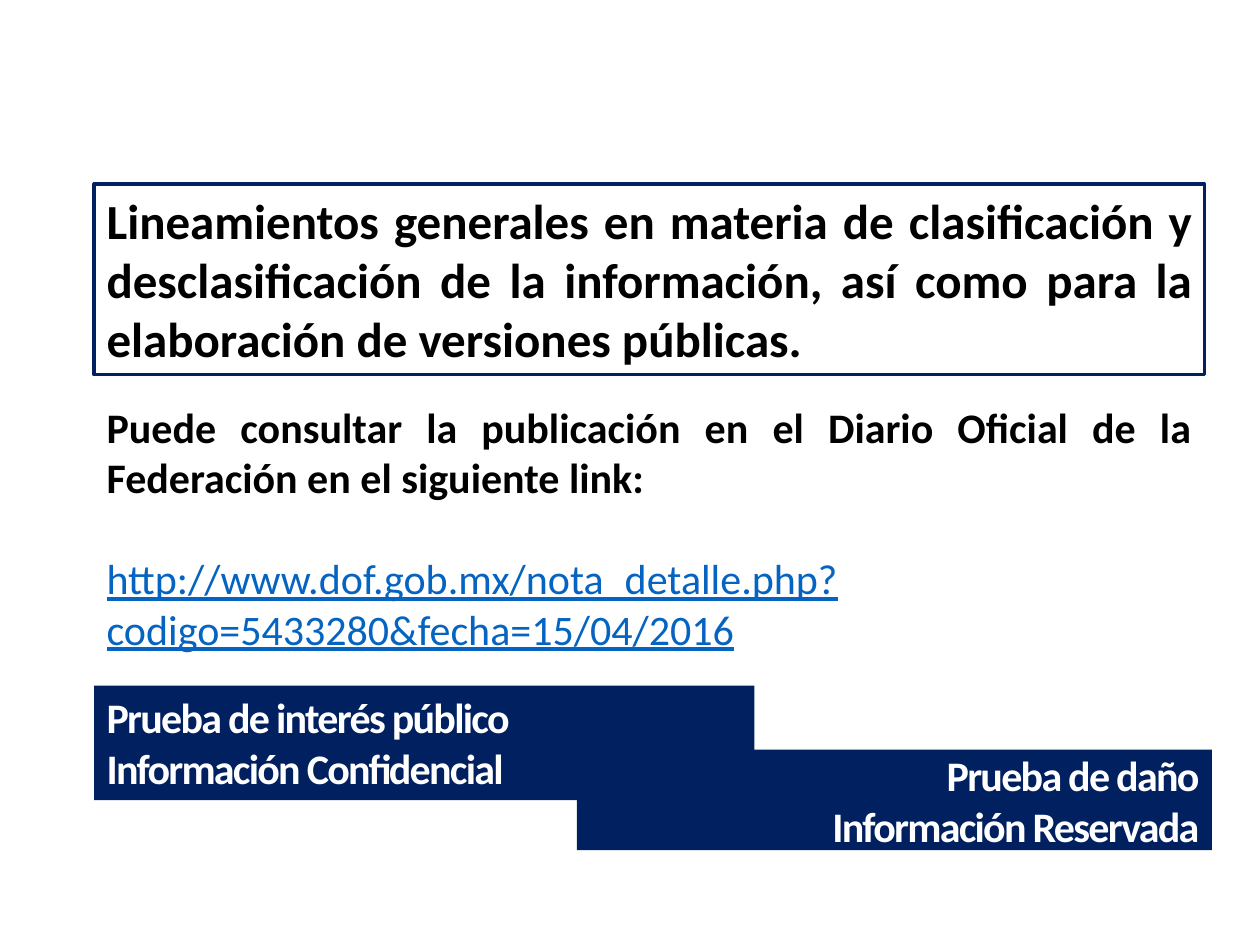
from dataclasses import dataclass
from typing import Optional

from pptx import Presentation
from pptx.dml.color import RGBColor
from pptx.enum import shapes, text
from pptx.util import Cm, Pt

NAVY, BLACK, WHITE, LINK_BLUE = "002060", "000000", "FFFFFF", "0563C1"
LEFT, WIDTH = 1.9, 22.38
LEFT_ALIGN, RIGHT_ALIGN, JUSTIFY = (
    text.PP_ALIGN.LEFT, text.PP_ALIGN.RIGHT, text.PP_ALIGN.JUSTIFY)


@dataclass
class Line:
    content: str
    color: str = BLACK
    size: int = 24
    bold: bool = True
    underline: bool = False
    spacing: int = 0  # hundredths of a point
    space_before: int = 0


@dataclass
class Panel:
    """A rectangle with text; lengths in centimetres."""
    left: float
    top: float
    width: float
    height: float
    lines: list[Line]
    align: text.PP_ALIGN = JUSTIFY
    anchor: text.MSO_ANCHOR = text.MSO_ANCHOR.TOP
    fill: Optional[str] = None
    outline: Optional[str] = None
    top_margin: float = 0.13


def rgb(hex_color: str) -> RGBColor:
    return RGBColor.from_string(hex_color)


def add_line(paragraph, line: Line, align: text.PP_ALIGN) -> None:
    paragraph.alignment = align
    if line.space_before:
        paragraph.space_before = Pt(line.space_before)
    run = paragraph.add_run()
    run.text = line.content
    font_format = {"name": "Calibri", "size": Pt(line.size),
                   "bold": line.bold, "underline": line.underline}
    for attribute, value in font_format.items():
        setattr(run.font, attribute, value)
    run.font.color.rgb = rgb(line.color)
    if line.spacing:
        run._r.get_or_add_rPr().set("spc", str(line.spacing))


def add_panel(slide, panel: Panel) -> None:
    bounds = [Cm(n) for n in (panel.left, panel.top, panel.width, panel.height)]
    if panel.fill or panel.outline:
        box = slide.shapes.add_shape(shapes.MSO_SHAPE.RECTANGLE, *bounds)
        box.shadow.inherit = False
    else:
        box = slide.shapes.add_textbox(*bounds)
    if panel.fill:
        box.fill.solid()
        box.fill.fore_color.rgb = rgb(panel.fill)
    else:
        box.fill.background()
    if panel.outline:
        box.line.color.rgb = rgb(panel.outline)
        box.line.width = Pt(2)
    else:
        box.line.fill.background()

    frame = box.text_frame
    frame_format = {"word_wrap": True, "vertical_anchor": panel.anchor,
                    "margin_top": Cm(panel.top_margin)}
    for attribute, value in frame_format.items():
        setattr(frame, attribute, value)
    for index, line in enumerate(panel.lines):
        paragraph = frame.add_paragraph() if index else frame.paragraphs[0]
        add_line(paragraph, line, panel.align)


def label_lines(*contents: str) -> list[Line]:
    return [Line(content, WHITE, spacing=-100) for content in contents]


PANELS = [
    Panel(LEFT, 6.93, WIDTH, 6.4, [
        Line("Puede consultar la publicación en el Diario Oficial de la "
             "Federación en el siguiente link:"),
        Line("http://www.dof.gob.mx/nota_detalle.php?codigo=5433280&fecha=15/04/2016",
             LINK_BLUE, bold=False, underline=True, space_before=29),
    ], top_margin=1.16),
    Panel(11.63, 15.11, 12.8, 2.03,
          label_lines("Prueba de daño", "Información Reservada"),
          RIGHT_ALIGN, text.MSO_ANCHOR.MIDDLE, fill=NAVY),
    Panel(LEFT, 13.82, 13.31, 2.31,
          label_lines("Prueba de interés público", "Información Confidencial"),
          LEFT_ALIGN, fill=NAVY),
    Panel(LEFT, 3.71, WIDTH, 3.84, [
        Line("Lineamientos generales en materia de clasificación y "
             "desclasificación de la información, así como para la "
             "elaboración de versiones públicas.", size=28),
    ], outline=NAVY),
]


def main() -> None:
    presentation = Presentation()
    presentation.slide_width, presentation.slide_height = Cm(25.4), Cm(19.05)
    slide = presentation.slides.add_slide(presentation.slide_layouts[6])
    for panel in PANELS:
        add_panel(slide, panel)
    presentation.save("out.pptx")


if __name__ == "__main__":
    main()
